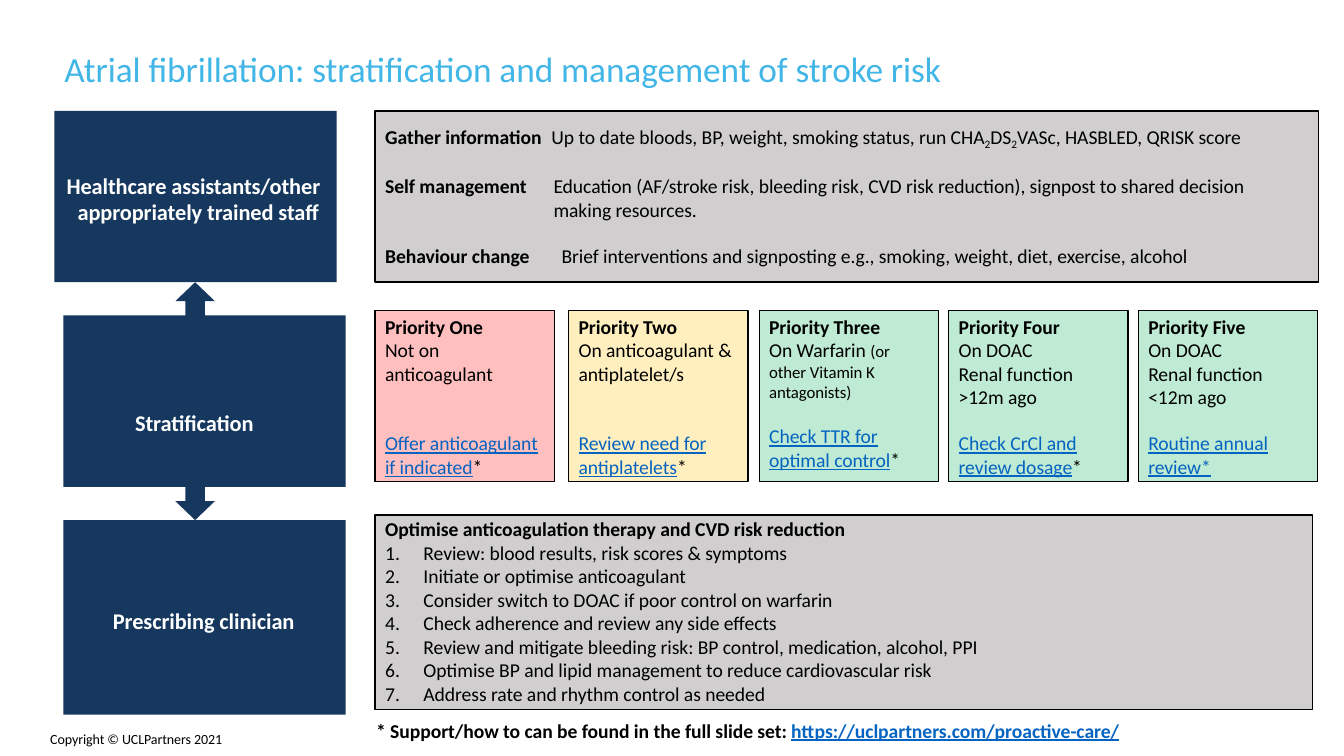
from pptx import Presentation
from pptx.dml.color import RGBColor
from pptx.enum.shapes import MSO_SHAPE
from pptx.enum.text import MSO_ANCHOR
from pptx.oxml.ns import qn
from pptx.util import Inches, Pt
from lxml import etree

RECT, UP, DOWN = MSO_SHAPE.RECTANGLE, MSO_SHAPE.UP_ARROW, MSO_SHAPE.DOWN_ARROW
TOP, MIDDLE = MSO_ANCHOR.TOP, MSO_ANCHOR.MIDDLE
NAVY = RGBColor(0x16, 0x38, 0x5E)
SKY = RGBColor(0x42, 0xB6, 0xE6)
GREY = RGBColor(0xD0, 0xCE, 0xCE)
BLACK = RGBColor(0, 0, 0)
WHITE = RGBColor(255, 255, 255)
RED = RGBColor(0xFF, 0, 0)
AMBER = RGBColor(0xFF, 0xC0, 0)
GREEN = RGBColor(0, 0xAF, 0x50)
BLUE = RGBColor(0x05, 0x63, 0xC1)

BASE = {"name": "Calibri", "size": Pt(14), "bold": False}
BOLD = {"bold": True}
SMALL = {"size": Pt(12)}
LINK = {"underline": True, "color": BLUE}
HEAD = {"size": Pt(16), "bold": True, "color": WHITE}

COLS = (3.72, 5.64, 7.53, 9.41, 11.29)
EDGE = COLS[0]
ROWS = (1.1, 3.08, 5.11)
PAD = 0.1

deck = Presentation()
deck.slide_width, deck.slide_height = Inches(13.33), Inches(7.5)
slide = deck.slides.add_slide(deck.slide_layouts[6])


def draw(kind, area, fill=None, line=None, left=0, top=0, anchor=TOP):
    spot = [Inches(v) for v in area]
    if kind is None:
        item = slide.shapes.add_textbox(*spot)
    else:
        item = slide.shapes.add_shape(kind, *spot)
        item.shadow.inherit = False
        item.fill.solid()
        item.fill.fore_color.rgb = fill
        if line is None:
            item.line.fill.background()
        else:
            item.line.color.rgb = line
            item.line.width = Pt(1)
    frame = item.text_frame
    form = {"word_wrap": True, "margin_left": Inches(left), "margin_top": Inches(top),
            "margin_right": 0, "margin_bottom": 0, "vertical_anchor": anchor}
    for key, val in form.items():
        setattr(frame, key, val)
    return item


def write(item, lines):
    frame = item.text_frame
    for n, (runs, form) in enumerate(lines):
        para = frame.paragraphs[0] if n == 0 else frame.add_paragraph()
        props = para._p.get_or_add_pPr()
        props.set("algn", "l")
        left = form.get("left", 0)
        props.set("marL", str(Inches(left)))
        props.set("indent", str(Inches(form.get("first", left) - left)))
        if n and "gap" in form:
            para.space_before = Pt(form["gap"])
        if "num" in form:
            etree.SubElement(props, qn("a:buFont"), typeface="+mj-lt")
            etree.SubElement(props, qn("a:buAutoNum"), type="arabicPeriod")
        for text, style in runs:
            for part, piece in enumerate(text.split("\v")):
                if part:
                    para.add_line_break()
                run = para.add_run()
                run.text = piece
                look = {**BASE, "color": BLACK, **style}
                run.font.color.rgb = look.pop("color")
                mark = run._r.get_or_add_rPr()
                mark.set("spc", "-7")
                if "base" in look:
                    mark.set("baseline", str(look.pop("base")))
                for key, val in look.items():
                    setattr(run.font, key, val)


title = draw(None, (0.54, 0.47, 10.39, 0.6), left=PAD, top=0.05)
write(title, [([("Atrial fibrillation: stratification and management of stroke risk",
                 {"size": Pt(25.2), "color": SKY})], {})])
title.text_frame.paragraphs[0].line_spacing = 0.9

cards = (
    (RED, "One", ("Not on", "anticoagulant"), (), 33,
     ("Offer anticoagulant", "if indicated"), BLACK),
    (AMBER, "Two", ("On anticoagulant &", "antiplatelet/s"), (), 33,
     ("Review need for", "antiplatelets"), BLACK),
    (GREEN, "Three", (), ("other Vitamin K", "antagonists)"), 16,
     ("Check TTR for", "optimal control"), BLACK),
    (GREEN, "Four", ("On DOAC", "Renal function", ">12m ago"), (), 16,
     ("Check CrCl and", "review dosage"), BLACK),
    (GREEN, "Five", ("On DOAC", "Renal function", "<12m ago"), (), 16,
     ("Routine annual", "review"), BLUE),
)
for left, (fill, rank, body, fine, gap, link, star) in zip(COLS, cards):
    card = draw(RECT, (left, ROWS[1], 1.78, 1.7), fill, BLACK, PAD, 0.04)
    tint = card._element.spPr.find(qn("a:solidFill"))[0]
    etree.SubElement(tint, qn("a:alpha"), val="25000")
    lines = [([("Priority " + rank, BOLD)], {})]
    lines += [([(text, {})], {}) for text in body]
    if fine:
        lines.append(([("On Warfarin ", {}), ("(or", SMALL)], {}))
        lines += [([(text, SMALL)], {}) for text in fine]
    lines.append(([(link[0], LINK)], {"gap": gap}))
    end = {"color": star, "underline": star == BLUE}
    lines.append(([(link[1], LINK), ("*", end)], {}))
    write(card, lines)

care = draw(RECT, (EDGE, ROWS[0], 9.36, 1.7), GREY, BLACK, top=0.14)
sub = {"base": -22000}
write(care, [
    ([("Gather information\t", BOLD),
      ("Up to date bloods, BP, weight, smoking status, run CHA", {}), ("2", sub),
      ("DS", {}), ("2", sub), ("VASc, HASBLED, QRISK score", {})],
     {"left": 1.75, "first": PAD}),
    ([("Self management\t", BOLD),
      ("Education (AF/stroke risk, bleeding risk, CVD risk reduction), "
       "signpost to shared decision\vmaking resources.", {})],
     {"left": 1.77, "first": PAD, "gap": 16.5}),
    ([("Behaviour change\t", BOLD),
      ("Brief interventions and signposting e.g., smoking, weight, diet, "
       "exercise, alcohol", {})],
     {"left": 1.85, "first": PAD, "gap": 16.5}),
])

plan = draw(RECT, (EDGE, ROWS[2], 9.3, 1.93), GREY, BLACK, top=0.02)
steps = (
    "Review: blood results, risk scores & symptoms",
    "Initiate or optimise anticoagulant",
    "Consider switch to DOAC if poor control on warfarin",
    "Check adherence and review any side effects",
    "Review and mitigate bleeding risk: BP control, medication, alcohol, PPI",
    "Optimise BP and lipid management to reduce cardiovascular risk",
    "Address rate and rhythm control as needed",
)
write(plan, [([("Optimise anticoagulation therapy and CVD risk reduction", BOLD)],
              {"left": PAD})]
      + [([(step, {})], {"left": 0.48, "first": PAD, "num": True}) for step in steps])

roles = (
    ("Healthcare assistants/other\vappropriately trained staff",
     (0.54, ROWS[0], 2.8, 1.7), 0.12, 0.11, 0.04),
    ("Stratification", (0.63, 3.13, 2.8, 1.7), 0.71, 0, 0.42),
    ("Prescribing clinician", (0.63, 5.16, 2.8, 1.93), 0.49, 0, 0.06),
)
for text, area, left, hang, top in roles:
    role = draw(RECT, area, NAVY, left=left, top=top, anchor=MIDDLE)
    write(role, [([(text, HEAD)], {"left": hang, "first": 0})])

for kind, top, high in ((UP, 2.8, 0.53), (DOWN, 4.69, 0.47)):
    arrow = draw(kind, (1.74, top, 0.39, high), NAVY)
    arrow.adjustments[0] = 0.5
    arrow.adjustments[1] = 0.48

note = draw(None, (EDGE, 7.12, 7.45, 0.26), left=0.01, top=0.01)
write(note, [([("* Support/how to can be found in the full slide set: ", BOLD),
               ("https://uclpartners.com/proactive-care/", {**LINK, **BOLD})], {})])

rights = draw(None, (0.4, 7.2, 1.96, 0.27), left=PAD, top=0.05)
write(rights, [([("Copyright © UCLPartners 2021", {"size": Pt(10)})], {})])

deck.save("out.pptx")
